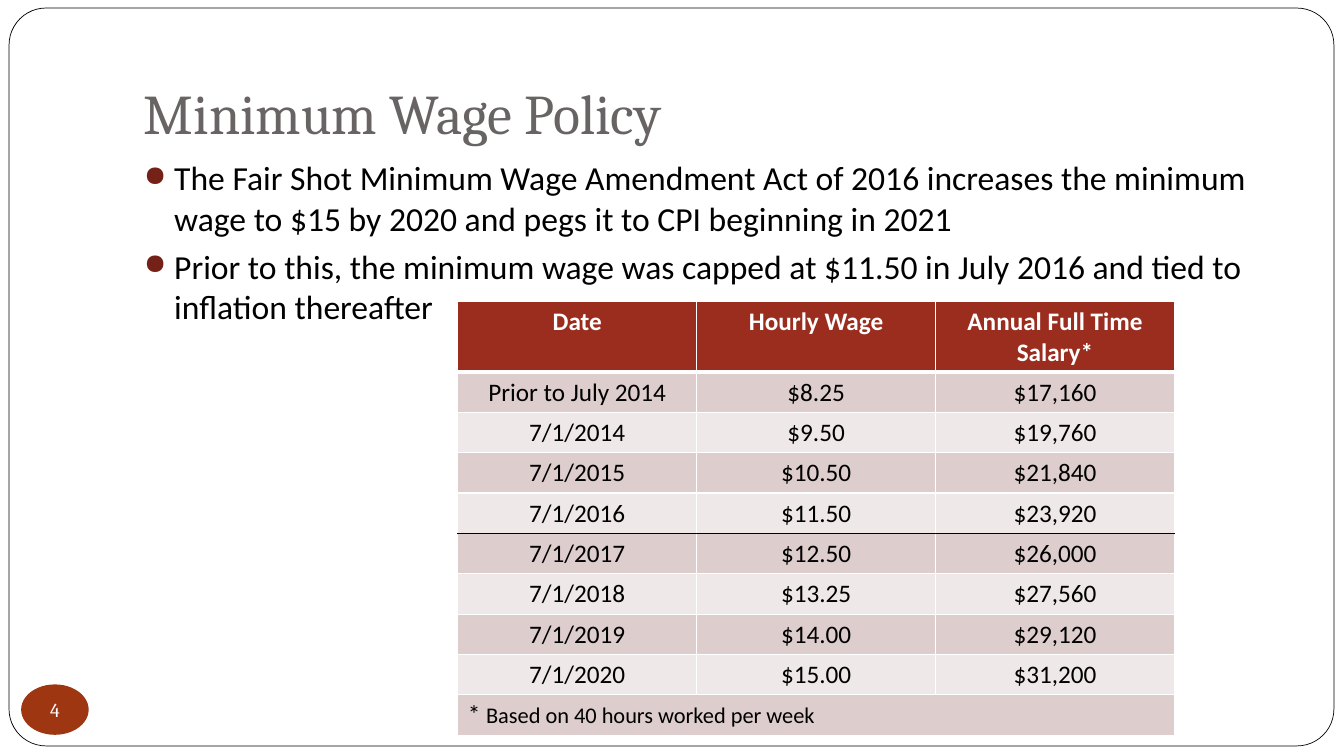
from lxml.etree import SubElement
from pptx import Presentation
from pptx.dml.color import RGBColor
from pptx.enum.shapes import MSO_SHAPE as Shape
from pptx.enum.text import MSO_ANCHOR as Anchor, PP_ALIGN as Align
from pptx.oxml import parse_xml
from pptx.oxml.ns import nsdecls, qn
from pptx.util import Inches, Pt


def color(value):
    return RGBColor.from_string(value)


def add_text(paragraph, text, size, font_name, hex_color, bold=False):
    run = paragraph.add_run()
    run.text = text
    run.font.color.rgb = color(hex_color)
    formats = {"size": Pt(size), "name": font_name, "bold": bold}
    for name, value in formats.items():
        setattr(run.font, name, value)


presentation = Presentation()
presentation.slide_width = Inches(13.33)
presentation.slide_height = Inches(7.5)
slide = presentation.slides.add_slide(presentation.slide_layouts[6])

frame = slide.shapes.add_shape(
    Shape.ROUNDED_RECTANGLE, Inches(0.09), Inches(0.08), Inches(13.14), Inches(7.32))
frame.adjustments[0] = 0.05
frame.shadow.inherit = False
frame.fill.solid()
frame.fill.fore_color.rgb = color("FFFFFF")
frame.line.color.rgb = color("000000")
frame.line.width = Pt(0.5)

title = slide.shapes.add_textbox(Inches(1.33), Inches(0.3), Inches(11.33), Inches(1.25))
title_formats = {"word_wrap": True, "vertical_anchor": Anchor.BOTTOM, "margin_bottom": Inches(0.1)}
for name, value in title_formats.items():
    setattr(title.text_frame, name, value)
add_text(title.text_frame.paragraphs[0], "Minimum Wage Policy", 40, "Cambria", "696464")

body = slide.shapes.add_textbox(Inches(1.33), Inches(1.51), Inches(11.33), Inches(5))
body.text_frame.word_wrap = True
bullets = [
    "The Fair Shot Minimum Wage Amendment Act of 2016 increases the minimum "
    "wage to $15 by 2020 and pegs it to CPI beginning in 2021",
    "Prior to this, the minimum wage was capped at $11.50 in July 2016 and tied to "
    "inflation thereafter",
]
for index, text in enumerate(bullets):
    paragraph = body.text_frame.paragraphs[0] if index == 0 else body.text_frame.add_paragraph()
    paragraph.space_before = Pt(5.8)
    add_text(paragraph, text, 24, "Calibri", "000000")
    properties = paragraph._p.get_or_add_pPr()
    properties.set("marL", str(Inches(0.3)))
    properties.set("indent", str(Inches(-0.3)))
    bullet_color = SubElement(properties, qn("a:buClr"))
    SubElement(bullet_color, qn("a:srgbClr"), val="742217")
    SubElement(properties, qn("a:buSzPct"), val="85000")
    SubElement(properties, qn("a:buChar"), char="●")

footnote = ["* ", "Based on 40 hours worked per week"]
wages = [
    ("Date", "Hourly Wage", "Annual Full Time Salary*"),
    ("Prior to July 2014", "$8.25", "$17,160"),
    ("7/1/2014", "$9.50", "$19,760"),
    ("7/1/2015", "$10.50", "$21,840"),
    ("7/1/2016", "$11.50", "$23,920"),
    ("7/1/2017", "$12.50", "$26,000"),
    ("7/1/2018", "$13.25", "$27,560"),
    ("7/1/2019", "$14.00", "$29,120"),
    ("7/1/2020", "$15.00", "$31,200"),
    ("", "", ""),
]
table = slide.shapes.add_table(
    len(wages), 3, Inches(4.54), Inches(2.99), Inches(7.11), Inches(4.3)).table
for column in table.columns:
    column.width = Inches(2.37)

rules_below = {0: ("FFFFFF", 3), 4: ("000000", 1)}
plain_rule = ("FFFFFF", 1)
for row_index, row_texts in enumerate(wages):
    is_header = row_index == 0
    table.rows[row_index].height = Inches(0.7 if is_header else 0.4)
    band = "DECDCD" if row_index % 2 else "EFE8E8"
    borders = {
        "lnL": plain_rule,
        "lnR": plain_rule,
        "lnT": rules_below.get(row_index - 1, plain_rule),
        "lnB": rules_below.get(row_index, plain_rule),
    }
    for column_index, text in enumerate(row_texts):
        cell = table.cell(row_index, column_index)
        cell.fill.solid()
        cell.fill.fore_color.rgb = color("9B2D1F" if is_header else band)
        if text:
            paragraph = cell.text_frame.paragraphs[0]
            paragraph.alignment = Align.CENTER
            add_text(paragraph, text, 18, "Calibri",
                     "FFFFFF" if is_header else "000000", is_header)
        cell_properties = cell._tc.get_or_add_tcPr()
        for position, (side, (hex_color, width)) in enumerate(borders.items()):
            cell_properties.insert(position, parse_xml(
                f'<a:{side} {nsdecls("a")} w="{Pt(width)}"><a:solidFill>'
                f'<a:srgbClr val="{hex_color}"/></a:solidFill></a:{side}>'))

footnote_row = len(wages) - 1
footnote_cell = table.cell(footnote_row, 0)
footnote_cell.merge(table.cell(footnote_row, 2))
for text, size in zip(footnote, (18, 16)):
    add_text(footnote_cell.text_frame.paragraphs[0], text, size, "Calibri", "000000")

page_badge = slide.shapes.add_shape(
    Shape.OVAL, Inches(0.21), Inches(6.79), Inches(0.67), Inches(0.5))
page_badge.shadow.inherit = False
page_badge.fill.solid()
page_badge.fill.fore_color.rgb = color("9E3611")
page_badge.line.fill.background()
badge_formats = {"margin_left": 0, "margin_right": 0, "margin_top": 0, "margin_bottom": 0,
                 "word_wrap": False, "vertical_anchor": Anchor.MIDDLE}
for name, value in badge_formats.items():
    setattr(page_badge.text_frame, name, value)
page_number = page_badge.text_frame.paragraphs[0]
page_number.alignment = Align.CENTER
add_text(page_number, "4", 14, "Cambria", "FFFFFF")

presentation.save("out.pptx")
